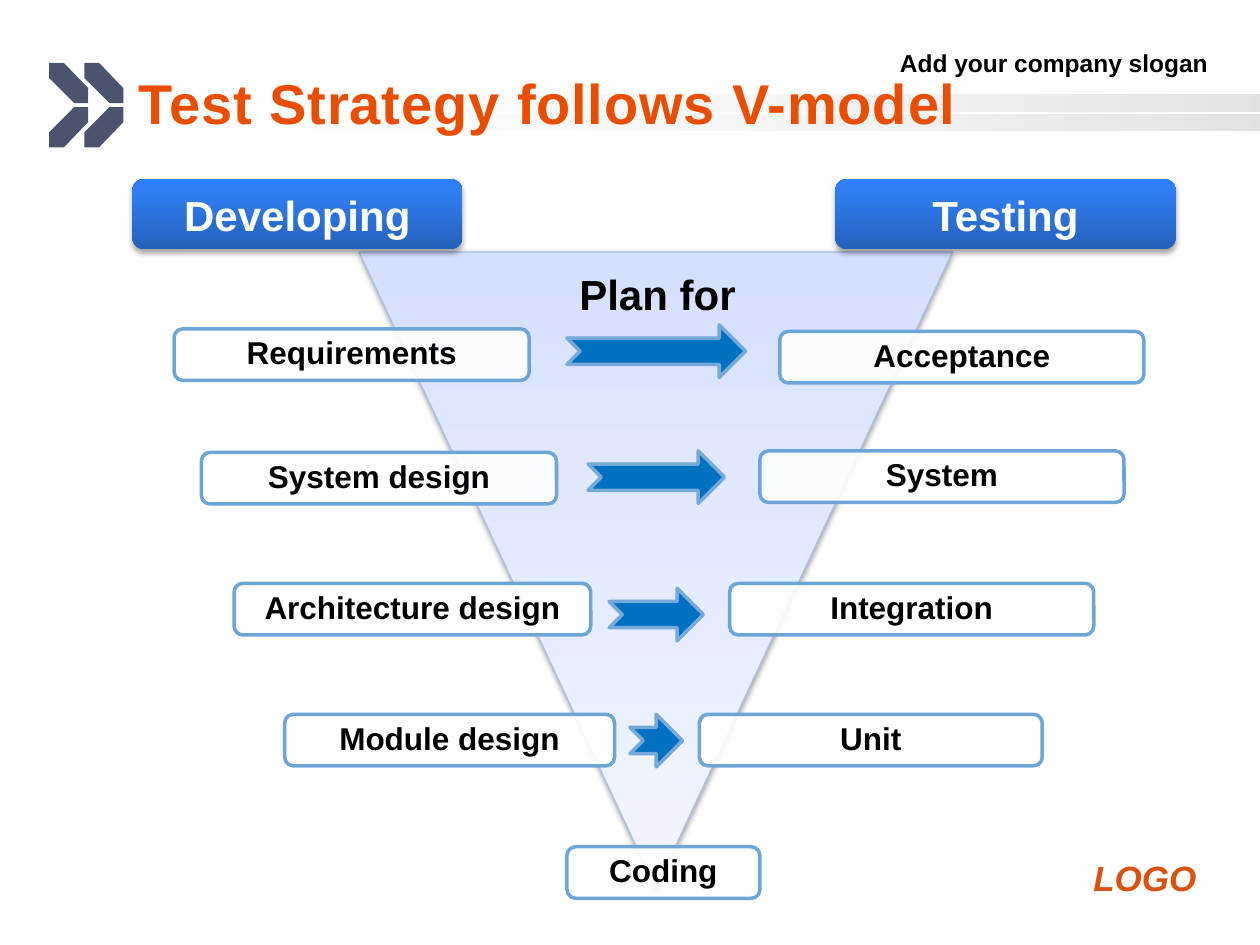
from pptx import Presentation
from pptx.dml.color import RGBColor
from pptx.enum.shapes import MSO_SHAPE
from pptx.enum.text import MSO_ANCHOR, PP_ALIGN
from pptx.oxml import parse_xml
from pptx.oxml.ns import nsdecls, qn
from pptx.util import Cm, Pt

RECT = MSO_SHAPE.RECTANGLE
ROUNDED = MSO_SHAPE.ROUNDED_RECTANGLE
TRIANGLE = MSO_SHAPE.ISOSCELES_TRIANGLE
ARROW = MSO_SHAPE.NOTCHED_RIGHT_ARROW
LEFT, CENTER, RIGHT = PP_ALIGN.LEFT, PP_ALIGN.CENTER, PP_ALIGN.RIGHT
TOP, MIDDLE = MSO_ANCHOR.TOP, MSO_ANCHOR.MIDDLE

FONT = "Arial"
COLORS = {
    "title": "E84D00", "logo": "D9520F", "text": "000000", "white": "FFFFFF",
    "chevron": "4B546F", "box line": "6CA5D8", "arrow": "0070C0",
    "arrow line": "74A9DA", "triangle line": "ACBEEB", "logo shadow": "808080",
}
# Gradient stops: position %, colour, opacity %
BAR_STOPS = [(0, "FFFFFF", 0), (100, "969696", 27)]
BUTTON_STOPS = [(0, "2561BB", 100), (80, "307EF2", 100), (100, "2D7EF7", 100)]
TRIANGLE_STOPS = [(0, "D5E0FF", 100), (35, "E0E8FF", 100), (100, "F3F6FF", 100)]

# All places are left, top, width, height in centimetres
TITLE = ("Test Strategy follows V-model", (2.54, 1.27, 20.96, 1.57))
SLOGAN = ("Add your company slogan", (9.32, 0.84, 15.29, 0.84))
LOGO = ("LOGO", (21.79, 17.15, 2.97, 1.09))
PLAN = ("Plan for", (11.43, 5.28, 4.24, 1.27))
TRIANGLE_PLACE = (7.24, 5.08, 11.96, 12.83)
BUTTONS = [("Developing", (2.67, 3.61, 6.65, 1.42)),
           ("Testing", (16.84, 3.61, 6.86, 1.42))]
BAR_TOPS = [1.91, 2.31]
BOX_HEIGHT = 1.04
# Text, left, top, width
BOXES = [
    ("Acceptance", 15.72, 6.68, 7.34),
    ("System", 15.32, 9.09, 7.34),
    ("Integration", 14.71, 11.76, 7.34),
    ("Unit", 14.1, 14.4, 6.91),
    ("Requirements", 3.51, 6.63, 7.16),
    ("System design", 4.06, 9.12, 7.16),
    ("Architecture design", 4.72, 11.76, 7.19),
    ("Module design", 5.74, 14.4, 6.65),
    ("Coding", 11.43, 17.07, 3.89),
]
ARROW_CENTER, ARROW_HEIGHT = 13.23, 1.06
ARROWS = [(6.55, 3.6), (9.09, 2.75), (11.86, 1.9), (14.4, 1.06)]  # top, width
CHEVRON_LEFTS = [0.99, 1.7]
CHEVRON_TOP, CHEVRON_BOTTOM = 1.27, 2.97
CHEVRON_HALF = [(0, 0), (0, 0.3), (0.51, 0.81), (0.79, 0.81), (0.79, 0.51), (0.3, 0)]


def rgb(name):
    return RGBColor.from_string(COLORS[name])


def add_shape(page, kind, place, line=None, width=2):
    shape = page.shapes.add_shape(kind, *map(Cm, place))
    shape.shadow.inherit = False
    if line:
        shape.line.color.rgb = rgb(line)
        shape.line.width = Pt(width)
    else:
        shape.line.fill.background()
    return shape


def set_gradient(shape, stops, angle):
    """Fill with a linear gradient; the angle runs clockwise in degrees."""
    parts = "".join(
        f'<a:gs pos="{pos * 1000}"><a:srgbClr val="{color}">'
        f'<a:alpha val="{alpha * 1000}"/></a:srgbClr></a:gs>'
        for pos, color, alpha in stops)
    shape.fill.background()
    props = shape.element.spPr
    props.replace(props.find(qn("a:noFill")), parse_xml(
        f'<a:gradFill {nsdecls("a")} rotWithShape="1"><a:gsLst>{parts}</a:gsLst>'
        f'<a:lin ang="{angle * 60000}" scaled="0"/></a:gradFill>'))


def outer_shadow(color, alpha, blur, distance, angle):
    return parse_xml(
        f'<a:outerShdw {nsdecls("a")} blurRad="{Pt(blur)}" dist="{Pt(distance)}" '
        f'dir="{angle * 60000}" rotWithShape="0"><a:srgbClr val="{color}">'
        f'<a:alpha val="{alpha * 1000}"/></a:srgbClr></a:outerShdw>')


def drop_shadow(shape, alpha, distance):
    effects = shape.element.spPr.find(qn("a:effectLst"))
    effects.append(outer_shadow("000000", alpha, 3.1, distance, 90))


def set_text(shape, text, size, color="text", align=CENTER, anchor=MIDDLE):
    frame = shape.text_frame
    frame.word_wrap = True
    frame.vertical_anchor = anchor
    para = frame.paragraphs[0]
    para.text = text
    para.alignment = align
    span = para.runs[0]
    span.font.name = FONT
    span.font.size = Pt(size)
    span.font.bold = True
    span.font.color.rgb = rgb(color)
    return span


def add_label(page, label, size, color="text", align=LEFT):
    text, place = label
    box = page.shapes.add_textbox(*map(Cm, place))
    return set_text(box, text, size, color, align, TOP)


def add_chevron_half(page, points):
    builder = page.shapes.build_freeform(*map(Cm, points[0]))
    builder.add_line_segments([(Cm(x), Cm(y)) for x, y in points[1:]])
    shape = builder.convert_to_shape()
    shape.shadow.inherit = False
    shape.fill.solid()
    shape.fill.fore_color.rgb = rgb("chevron")
    shape.line.fill.background()


def add_header(page):
    for top in BAR_TOPS:
        bar = add_shape(page, RECT, (1.91, top, 23.49, 0.33))
        set_gradient(bar, BAR_STOPS, 0)
    for left in CHEVRON_LEFTS:
        add_chevron_half(page, [(left + x, CHEVRON_TOP + y) for x, y in CHEVRON_HALF])
        add_chevron_half(page, [(left + x, CHEVRON_BOTTOM - y) for x, y in CHEVRON_HALF])
    add_label(page, SLOGAN, 14, align=RIGHT)
    logo = add_label(page, LOGO, 20, "logo")
    logo.font.italic = True
    effects = parse_xml(f'<a:effectLst {nsdecls("a")}/>')
    effects.append(outer_shadow(COLORS["logo shadow"], 100, 0, 2, 45))
    logo.font._element.find(qn("a:solidFill")).addnext(effects)


def add_title(page):
    text, place = TITLE
    title = page.shapes.title
    title.left, title.top, title.width, title.height = map(Cm, place)
    span = set_text(title, text, 32, "title", LEFT)
    span.font._element.set("spc", "50")
    title.element.getparent().append(title.element)


def add_model(page):
    funnel = add_shape(page, TRIANGLE, TRIANGLE_PLACE, "triangle line", 0.75)
    funnel.rotation = 180
    set_gradient(funnel, TRIANGLE_STOPS, 270)
    drop_shadow(funnel, 38, 1.6)

    for text, left, top, width in BOXES:
        box = add_shape(page, ROUNDED, (left, top, width, BOX_HEIGHT), "box line")
        box.fill.solid()
        box.fill.fore_color.rgb = rgb("white")
        color = box.element.spPr.find(qn("a:solidFill"))[0]
        color.append(parse_xml(f'<a:alpha {nsdecls("a")} val="90000"/>'))
        set_text(box, text, 18)
        frame = box.text_frame
        frame.margin_left = frame.margin_right = Cm(0.18)
        frame.margin_top = frame.margin_bottom = Cm(0.18)
        frame.paragraphs[0].line_spacing = 0.9

    for text, place in BUTTONS:
        button = add_shape(page, ROUNDED, place)
        set_gradient(button, BUTTON_STOPS, 270)
        drop_shadow(button, 35, 1.8)
        set_text(button, text, 24, "white")

    add_title(page)
    for top, width in ARROWS:
        place = (ARROW_CENTER - width / 2, top, width, ARROW_HEIGHT)
        arrow = add_shape(page, ARROW, place, "arrow line")
        arrow.fill.solid()
        arrow.fill.fore_color.rgb = rgb("arrow")
    add_label(page, PLAN, 24)


def main():
    deck = Presentation()
    deck.slide_width, deck.slide_height = Cm(25.4), Cm(19.05)
    page = deck.slides.add_slide(deck.slide_layouts[5])
    add_header(page)
    add_model(page)
    deck.save("out.pptx")


if __name__ == "__main__":
    main()
